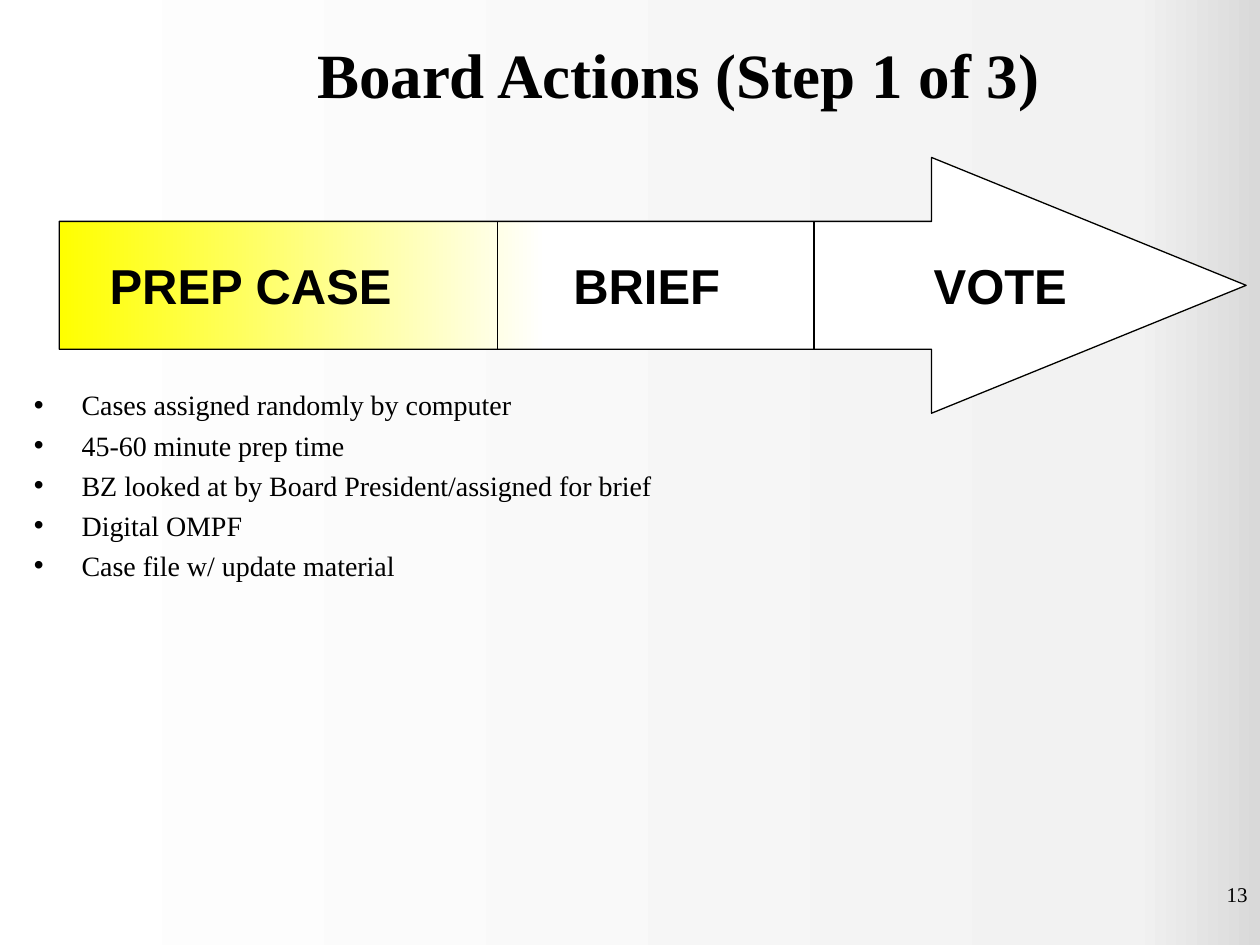
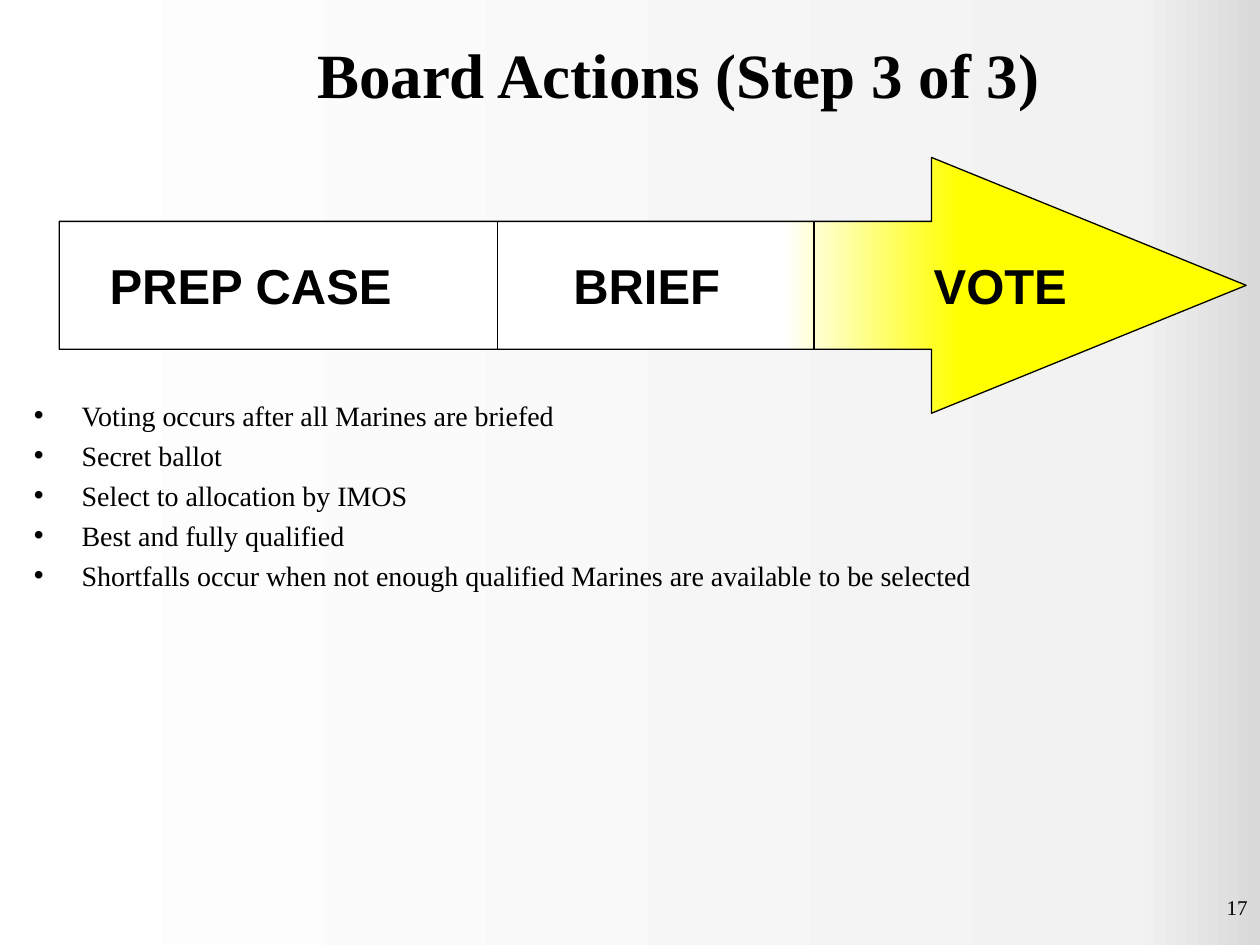
from lxml.etree import SubElement
from pptx import Presentation
from pptx.dml.color import RGBColor
from pptx.enum.shapes import MSO_CONNECTOR, MSO_SHAPE
from pptx.enum.text import MSO_ANCHOR, PP_ALIGN
from pptx.oxml.ns import qn
from pptx.util import Inches, Pt

BLACK = RGBColor(0x00, 0x00, 0x00)
WHITE = RGBColor(0xFF, 0xFF, 0xFF)
YELLOW = RGBColor(0xFF, 0xFF, 0x00)
PALE_GREY = RGBColor(0xF2, 0xF2, 0xF2)
GREY = RGBColor(0xD9, 0xD9, 0xD9)
SERIF = "Times New Roman"
SANS = "Arial"

ARROW_LEFT, ARROW_TOP, ARROW_WIDTH, ARROW_HEIGHT = 0.47, 1.25, 9.42, 2.03
SHAFT_TOP = ARROW_TOP + ARROW_HEIGHT / 4
SHAFT_BOTTOM = SHAFT_TOP + ARROW_HEIGHT / 2
DIVIDERS = (3.95, 6.46)
PHASES = ("PREP CASE", "BRIEF", "VOTE")
PHASE_TABS = (3.68, 6.54)
BULLET_INDENT = 0.38

STEPS = [
    {
        "number": 1,
        "page": "13",
        "page_anchor": MSO_ANCHOR.TOP,
        "highlight": [(0, YELLOW), (41, WHITE)],
        "body_top": 3.03,
        "points": [
            "Cases assigned randomly by computer",
            "45-60 minute prep time",
            "BZ looked at by Board President/assigned for brief",
            "Digital OMPF",
            "Case file w/ update material",
        ],
    },
    {
        "number": 3,
        "page": "17",
        "page_anchor": MSO_ANCHOR.BOTTOM,
        "highlight": [(61, WHITE), (76, YELLOW)],
        "body_top": 3.11,
        "points": [
            "Voting occurs after all Marines are briefed",
            "Secret ballot",
            "Select to allocation by IMOS",
            "Best and fully qualified",
            "Shortfalls occur when not enough qualified Marines are available to be selected",
        ],
    },
]


def set_gradient(fill, element, stops):
    """Fill from left to right with (percent, colour) stops; element holds the fill."""
    fill.gradient()
    fill.gradient_angle = 0
    stop_list = element.find(".//" + qn("a:gsLst"))
    for old_stop in list(stop_list):
        stop_list.remove(old_stop)
    for percent, color in stops:
        stop = SubElement(stop_list, qn("a:gs"), pos=str(percent * 1000))
        SubElement(stop, qn("a:srgbClr"), val=str(color))


def write_text(shape, *lines, size, font=SERIF, bold=False, align=PP_ALIGN.LEFT,
               anchor=MSO_ANCHOR.TOP, bullet=None, tabs=(), space_before=0):
    frame = shape.text_frame
    frame.word_wrap = True
    frame.vertical_anchor = anchor
    for index, line in enumerate(lines):
        paragraph = frame.paragraphs[0] if index == 0 else frame.add_paragraph()
        paragraph.text = line
        paragraph.alignment = align
        if index:
            paragraph.space_before = Pt(space_before)
        properties = paragraph._p.get_or_add_pPr()
        if bullet:
            properties.set("marL", str(Inches(BULLET_INDENT)))
            properties.set("indent", str(-Inches(BULLET_INDENT)))
            SubElement(properties, qn("a:buFont"), typeface=SANS)
            SubElement(properties, qn("a:buChar"), char=bullet)
        if tabs:
            tab_list = SubElement(properties, qn("a:tabLst"))
            for position in tabs:
                SubElement(tab_list, qn("a:tab"), pos=str(Inches(position)), algn="l")
        paragraph.font.name = font
        paragraph.font.size = Pt(size)
        paragraph.font.bold = bold
        paragraph.font.color.rgb = BLACK


presentation = Presentation()
presentation.slide_width = Inches(10)
presentation.slide_height = Inches(7.5)
blank_layout = presentation.slide_layouts[6]

for step in STEPS:
    slide = presentation.slides.add_slide(blank_layout)
    set_gradient(slide.background.fill, slide.element,
                 [(0, WHITE), (90, PALE_GREY), (100, GREY)])

    title = slide.shapes.add_textbox(Inches(1.17), 0, Inches(8.43), Inches(1.17))
    write_text(title, f"Board Actions (Step {step['number']} of 3)", size=36, bold=True,
               align=PP_ALIGN.CENTER, anchor=MSO_ANCHOR.MIDDLE)

    body = slide.shapes.add_textbox(Inches(0.17), Inches(step["body_top"]),
                                    Inches(8.5), Inches(3.75))
    write_text(body, *step["points"], size=16, bullet="•", space_before=3.7)

    arrow = slide.shapes.add_shape(MSO_SHAPE.RIGHT_ARROW, Inches(ARROW_LEFT), Inches(ARROW_TOP),
                                   Inches(ARROW_WIDTH), Inches(ARROW_HEIGHT))
    arrow.shadow.inherit = False
    arrow.adjustments[0] = 0.5
    arrow.adjustments[1] = 1.23
    set_gradient(arrow.fill, arrow.element, step["highlight"])
    arrow.line.color.rgb = BLACK
    arrow.line.width = Pt(0.75)
    arrow.text_frame.margin_left = Inches(0.4)
    write_text(arrow, "\t".join(PHASES), size=28, font=SANS, bold=True,
               anchor=MSO_ANCHOR.MIDDLE, tabs=PHASE_TABS)

    for x in DIVIDERS:
        divider = slide.shapes.add_connector(MSO_CONNECTOR.STRAIGHT, Inches(x), Inches(SHAFT_TOP),
                                             Inches(x), Inches(SHAFT_BOTTOM))
        divider.line.color.rgb = BLACK
        divider.line.width = Pt(0.75)
        SubElement(divider.element.spPr, qn("a:effectLst"))

    page_number = slide.shapes.add_textbox(Inches(7.67), Inches(6.95), Inches(2.33), Inches(0.4))
    write_text(page_number, step["page"], size=12, align=PP_ALIGN.RIGHT,
               anchor=step["page_anchor"])

presentation.save("out.pptx")
